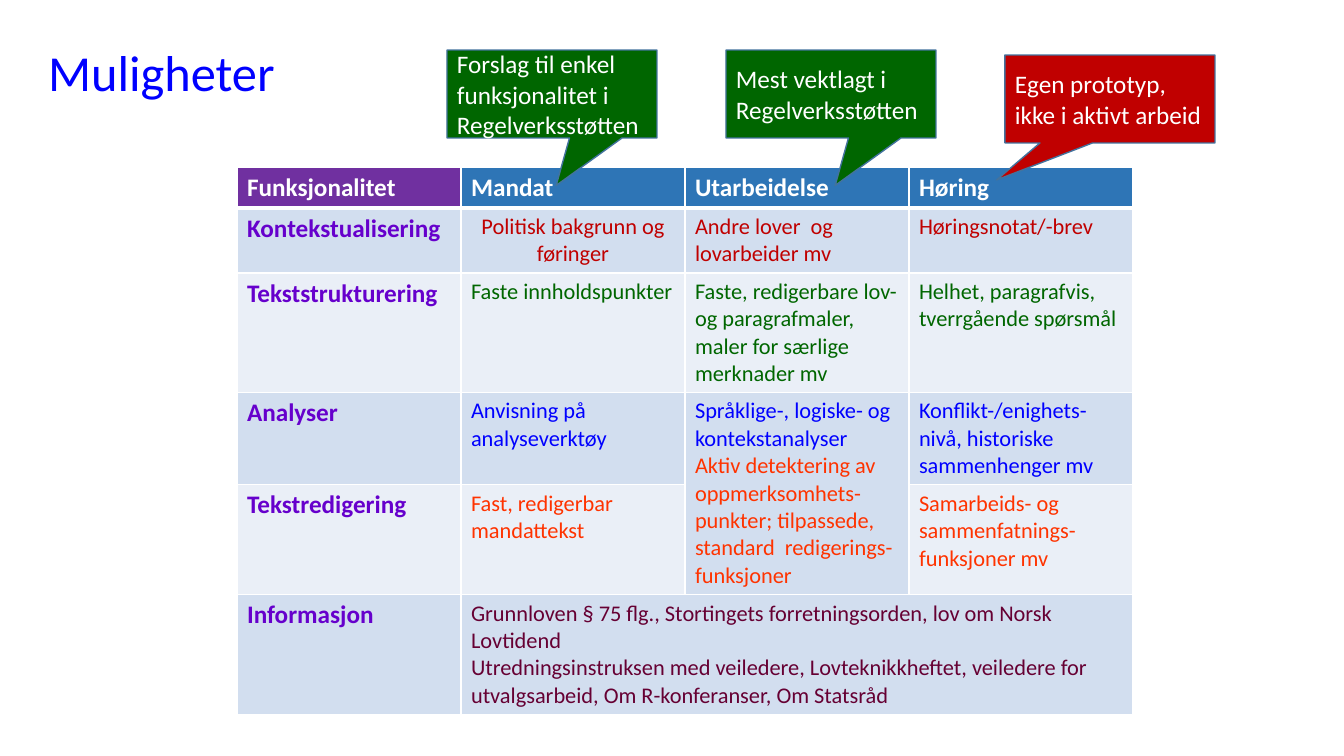
from dataclasses import dataclass

from pptx import Presentation
from pptx import util as u
from pptx.dml.color import RGBColor
from pptx.enum import shapes, text
from pptx.oxml import parse_xml
from pptx.oxml.ns import nsdecls


@dataclass(frozen=True)
class Theme:
    font: str = "Calibri"
    title_size: int = 36
    label_size: int = 18
    cell_size: int = 16
    white: str = "FFFFFF"
    purple: str = "7030A0"
    header: str = "2E75B6"
    bands: tuple = ("D2DEEF", "EAEFF7")
    outline: str = "43739E"
    label: str = "6600CC"
    red: str = "C00000"
    green: str = "006600"
    blue: str = "0000FF"
    orange: str = "FF3300"
    wine: str = "660033"


THEME = Theme()
EMU_PER_PX = 914400 / 100.8

HEADINGS = ["Funksjonalitet", "Mandat", "Utarbeidelse", "Høring"]
FEATURES = [
    ("Kontekstualisering", THEME.red,
     ["Politisk bakgrunn og føringer"],
     ["Andre lover  og lovarbeider mv"],
     ["Høringsnotat/-brev"]),
    ("Tekststrukturering", THEME.green,
     ["Faste innholdspunkter"],
     ["Faste, redigerbare lov- og paragrafmaler, maler for særlige merknader mv"],
     ["Helhet, paragrafvis, tverrgående spørsmål"]),
    ("Analyser", THEME.blue,
     ["Anvisning på analyseverktøy"],
     ["Språklige-, logiske- og kontekstanalyser",
      "Aktiv detektering av",
      "oppmerksomhets-punkter; tilpassede, standard  redigerings-funksjoner"],
     ["Konflikt-/enighets-nivå, historiske sammenhenger mv"]),
    ("Tekstredigering", THEME.orange,
     ["Fast, redigerbar mandattekst"],
     [],
     ["Samarbeids- og sammenfatnings-funksjoner mv"]),
    ("Informasjon", THEME.wine,
     ["Grunnloven § 75 flg., Stortingets forretningsorden, lov om Norsk Lovtidend",
      "Utredningsinstruksen med veiledere, Lovteknikkheftet, veiledere for "
      "utvalgsarbeid, Om R-konferanser, Om Statsråd"],
     [],
     []),
]
ROW_HEIGHTS = [41, 65, 119, 92, 110, 119]
CALLOUTS = [
    ((1005, 55, 210, 88), THEME.red, (-0.54, 0.92),
     "Egen prototyp, ikke i aktivt arbeid"),
    ((447, 50, 210, 88), THEME.green, (0.02, 1.04),
     "Forslag til enkel funksjonalitet i Regelverksstøtten"),
    ((726, 50, 210, 88), THEME.green, (0.02, 1.04),
     "Mest vektlagt i Regelverksstøtten"),
]


def px(length):
    return u.Emu(round(length * EMU_PER_PX))


def rgb(colour):
    return RGBColor.from_string(colour)


def write(frame, lines, size, colour, bold=False, align=text.PP_ALIGN.LEFT):
    frame.text = "\n".join(lines)
    for paragraph in frame.paragraphs:
        paragraph.alignment = align
        font = paragraph.font
        font.name, font.size, font.bold = THEME.font, u.Pt(size), bold
        font.color.rgb = rgb(colour)


def paint(cell, fill, top=1, bottom=1):
    properties = cell._tc.get_or_add_tcPr()
    for side, width in (("L", 1), ("R", 1), ("T", top), ("B", bottom)):
        properties.append(parse_xml(
            f'<a:ln{side} {nsdecls("a")} w="{u.Pt(width)}"><a:solidFill>'
            f'<a:srgbClr val="{THEME.white}"/></a:solidFill></a:ln{side}>'))
    cell.fill.solid()
    cell.fill.fore_color.rgb = rgb(fill)


def add_title(slide, box, wording):
    title = slide.shapes.title
    title.left, title.top, title.width, title.height = map(px, box)
    frame = title.text_frame
    write(frame, [wording], THEME.title_size, THEME.blue)
    frame.auto_size = text.MSO_AUTO_SIZE.NONE
    frame.vertical_anchor = text.MSO_ANCHOR.MIDDLE
    frame.paragraphs[0].line_spacing = 0.9


def add_feature_table(slide, box):
    table = slide.shapes.add_table(
        len(ROW_HEIGHTS), len(HEADINGS), *map(px, box)).table
    table.first_row = table.horz_banding = False
    for row, height in zip(table.rows, ROW_HEIGHTS):
        row.height = px(height)

    for column, heading in enumerate(HEADINGS):
        cell = table.cell(0, column)
        write(cell.text_frame, [heading], THEME.label_size, THEME.white, True)
        paint(cell, THEME.header if column else THEME.purple, bottom=3)

    for row, (label, colour, *details) in enumerate(FEATURES, 1):
        fill = THEME.bands[(row - 1) % 2]
        top = 3 if row == 1 else 1
        write(table.cell(row, 0).text_frame, [label],
              THEME.label_size, THEME.label, True)
        paint(table.cell(row, 0), fill, top)
        for column, lines in enumerate(details, 1):
            cell = table.cell(row, column)
            write(cell.text_frame, lines, THEME.cell_size, colour)
            paint(cell, fill, top)

    table.cell(1, 1).text_frame.paragraphs[0].alignment = text.PP_ALIGN.CENTER
    editing = table.cell(3, 2)
    for paragraph in editing.text_frame.paragraphs[1:]:
        paragraph.font.color.rgb = rgb(THEME.orange)
    editing.merge(table.cell(4, 2))
    table.cell(5, 1).merge(table.cell(5, 3))


def add_callout(slide, box, fill, tip, wording):
    callout = slide.shapes.add_shape(
        shapes.MSO_SHAPE.RECTANGULAR_CALLOUT, *map(px, box))
    callout.shadow.inherit = False
    callout.adjustments[0], callout.adjustments[1] = tip
    callout.fill.solid()
    callout.fill.fore_color.rgb = rgb(fill)
    callout.line.color.rgb = rgb(THEME.outline)
    callout.line.width = u.Pt(1)
    frame = callout.text_frame
    frame.word_wrap = True
    frame.vertical_anchor = text.MSO_ANCHOR.MIDDLE
    write(frame, [wording], THEME.label_size, THEME.white)


def main():
    deck = Presentation()
    deck.slide_width, deck.slide_height = px(1344), px(756)
    slide = deck.slides.add_slide(deck.slide_layouts.get_by_name("Title Only"))
    add_title(slide, (38, 39, 1240, 72), "Muligheter")
    add_feature_table(slide, (237, 167, 896, sum(ROW_HEIGHTS)))
    for callout in CALLOUTS:
        add_callout(slide, *callout)
    deck.save("out.pptx")


if __name__ == "__main__":
    main()
